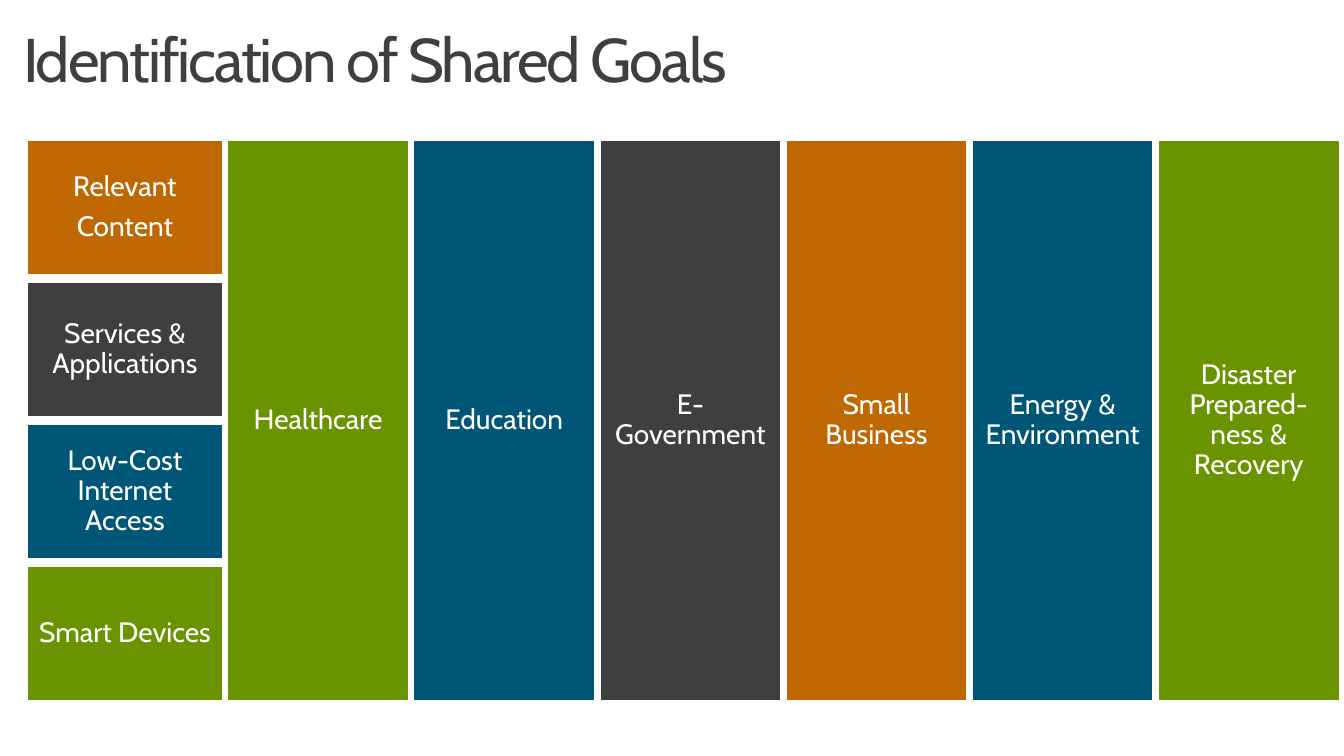
from pptx import Presentation
from pptx.dml.color import RGBColor
from pptx.enum.shapes import MSO_SHAPE as Shape
from pptx.enum.text import MSO_ANCHOR as Anchor, MSO_AUTO_SIZE as AutoSize, PP_ALIGN as Align
from pptx.util import Inches, Pt

WHITE = RGBColor(0xFF, 0xFF, 0xFF)
CHARCOAL = RGBColor(0x3F, 0x3F, 0x3F)
BLUE = RGBColor(0x00, 0x56, 0x77)
GREEN = RGBColor(0x69, 0x94, 0x00)
ORANGE = RGBColor(0xBF, 0x67, 0x00)

# Layout in inches
TOP, HEIGHT = 1.38, 5.58
GOAL_LEFT, GOAL_LAST_LEFT, GOAL_WIDTH = 2.25, 11.48, 1.81
ENABLER_LEFT, ENABLER_WIDTH, ENABLER_HEIGHT = 0.26, 1.96, 1.35

GOALS = [
    ("Healthcare", GREEN),
    ("Education", BLUE),
    ("E-Government", CHARCOAL),
    ("Small Business", ORANGE),
    ("Energy & Environment", BLUE),
    ("Disaster Prepared-ness & Recovery", GREEN),
]
ENABLERS = [
    ("Relevant\nContent", ORANGE),
    ("Services & Applications", CHARCOAL),
    ("Low-Cost Internet Access", BLUE),
    ("Smart Devices", GREEN),
]


def apply(target, values):
    for name, value in values.items():
        setattr(target, name, value)


class GoalsSlide:
    TITLE_FONT = {"name": "Cabin", "size": Pt(44), "bold": False}
    TILE_FONT = {"name": "Cabin", "size": Pt(20), "bold": False}
    TILE_PARAGRAPH = {"alignment": Align.CENTER, "line_spacing": 0.9, "space_after": Pt(7)}
    TITLE_PARAGRAPH = {"alignment": Align.LEFT, "line_spacing": 0.9}

    def __init__(self, deck):
        self.slide = deck.slides.add_slide(deck.slide_layouts[5])

    def fill_text(self, frame, text, margin, paragraph_style, font_style, color):
        sides = ("left", "top", "right", "bottom")
        apply(frame, {f"margin_{side}": Inches(margin) for side in sides})
        frame.word_wrap = True
        frame.text = text
        for paragraph in frame.paragraphs:
            apply(paragraph, paragraph_style)
            for run in paragraph.runs:
                apply(run.font, font_style)
                run.font.color.rgb = color

    def title(self, text, left, top, width, height):
        heading = self.slide.shapes.title
        apply(heading, {"left": Inches(left), "top": Inches(top),
                        "width": Inches(width), "height": Inches(height)})
        frame = heading.text_frame
        self.fill_text(frame, text, 0, self.TITLE_PARAGRAPH, self.TITLE_FONT, CHARCOAL)
        apply(frame, {"vertical_anchor": Anchor.TOP, "auto_size": AutoSize.SHAPE_TO_FIT_TEXT})
        # Tightened letter spacing, in hundredths of a point
        frame.paragraphs[0].runs[0]._r.get_or_add_rPr().set("spc", "-150")

    def tile(self, text, color, left, top, width, height):
        block = self.slide.shapes.add_shape(
            Shape.RECTANGLE, Inches(left), Inches(top), Inches(width), Inches(height))
        block.shadow.inherit = False
        block.fill.solid()
        block.fill.fore_color.rgb = color
        block.line.color.rgb = WHITE
        block.line.width = Pt(2)
        block.text_frame.vertical_anchor = Anchor.MIDDLE
        self.fill_text(block.text_frame, text, 0.12, self.TILE_PARAGRAPH, self.TILE_FONT, WHITE)


def main():
    deck = Presentation()
    deck.slide_width, deck.slide_height = Inches(13.33), Inches(7.5)
    page = GoalsSlide(deck)

    # Title
    page.title("Identification of Shared Goals", 0.23, 0.29, 12.29, 0.67)

    # Goal columns
    goal_pitch = (GOAL_LAST_LEFT - GOAL_LEFT) / (len(GOALS) - 1)
    for column, (goal, color) in enumerate(GOALS):
        page.tile(goal, color, GOAL_LEFT + column * goal_pitch, TOP, GOAL_WIDTH, HEIGHT)

    # Enabler stack
    enabler_pitch = (HEIGHT - ENABLER_HEIGHT) / (len(ENABLERS) - 1)
    for row, (enabler, color) in enumerate(ENABLERS):
        page.tile(enabler, color, ENABLER_LEFT, TOP + row * enabler_pitch,
                  ENABLER_WIDTH, ENABLER_HEIGHT)

    deck.save("out.pptx")


if __name__ == "__main__":
    main()
